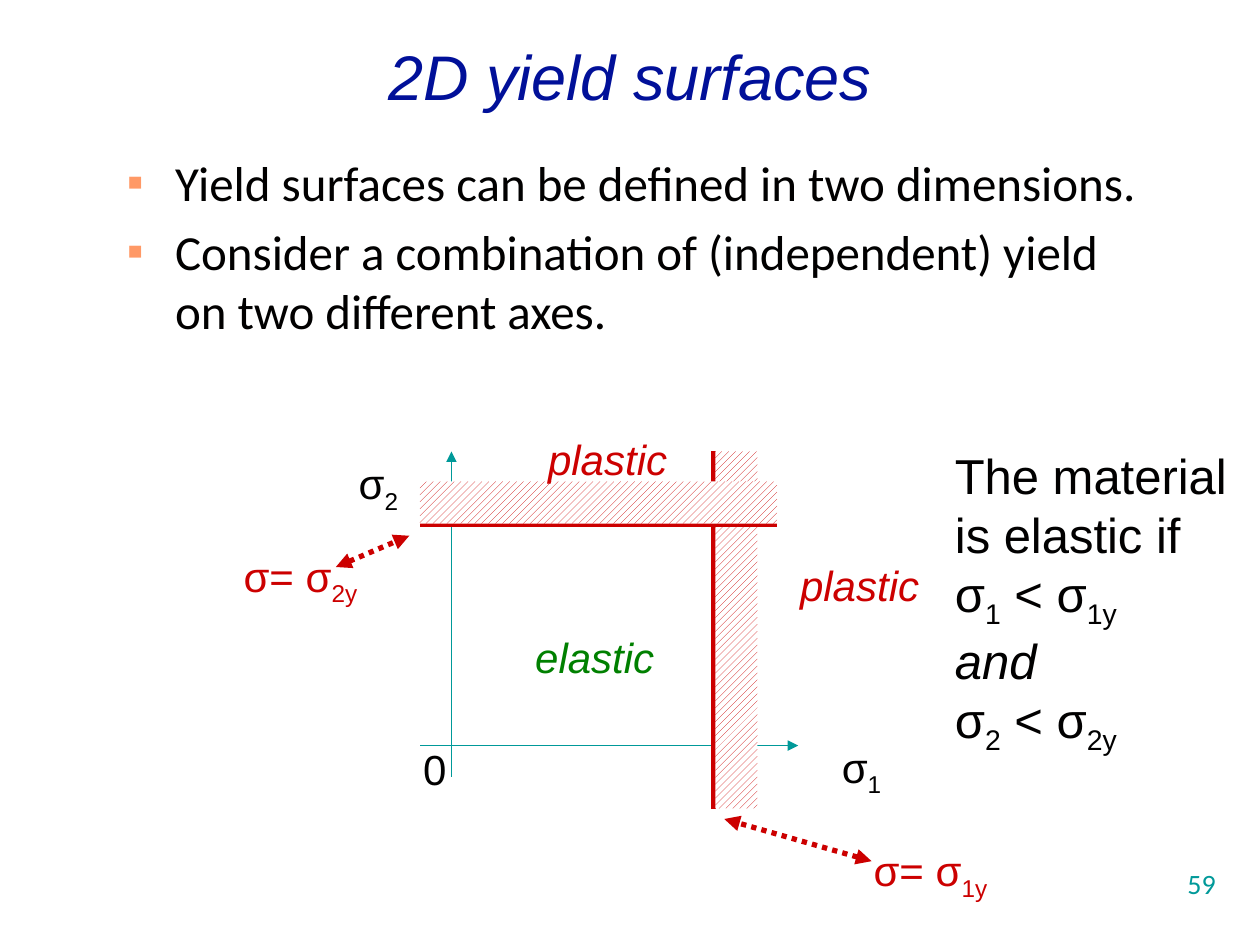
from dataclasses import dataclass

from lxml.etree import SubElement
from pptx import Presentation
from pptx.dml.color import RGBColor
from pptx.enum.dml import MSO_LINE, MSO_PATTERN
from pptx.enum.shapes import MSO_CONNECTOR, MSO_SHAPE
from pptx.enum.text import MSO_ANCHOR, MSO_AUTO_SIZE, PP_ALIGN
from pptx.oxml.ns import qn
from pptx.slide import Slide
from pptx.util import Cm, Pt

COLORS = {
    "title": "011099",
    "text": "010000",
    "axis": "009999",
    "yield": "CC0000",
    "elastic": "008000",
    "bullet": "FF9966",
    "paper": "FFFFFF",
}


def color(name):
    return RGBColor.from_string(COLORS[name])


def write_text(para, text, size=24, font="Arial", ink="text", italic=False):
    for index, part in enumerate(text.split("|")):
        for row, line in enumerate(part.split("\n")):
            if row:
                para.add_line_break()
            span = para.add_run()
            span.text = line
            span.font.size = Pt(size)
            span.font.name = font
            span.font.italic = italic
            span.font.color.rgb = color(ink)
            if index % 2:
                span._r.get_or_add_rPr().set("baseline", "-25000")


@dataclass
class YieldSlide:
    page: Slide
    thin: float = 0.75
    thick: float = 3

    def text(self, left, top, width, height, paragraphs, wrap=False,
             align=PP_ALIGN.LEFT, anchor=MSO_ANCHOR.TOP, spacing=None, **style):
        box = self.page.shapes.add_textbox(Cm(left), Cm(top), Cm(width), Cm(height))
        frame = box.text_frame
        frame.word_wrap = wrap
        frame.auto_size = MSO_AUTO_SIZE.NONE if wrap else MSO_AUTO_SIZE.SHAPE_TO_FIT_TEXT
        frame.vertical_anchor = anchor
        for index, text in enumerate(paragraphs):
            para = frame.add_paragraph() if index else frame.paragraphs[0]
            para.alignment = align
            para.line_spacing = spacing
            write_text(para, text, **{**style, "italic": style.get("italic", text == "and")})
        return frame

    def bullets(self, left, top, width, height, paragraphs, **style):
        frame = self.text(left, top, width, height, paragraphs, wrap=True, **style)
        for para in frame.paragraphs:
            para.space_before = Pt(5.6)
            props = para._p.get_or_add_pPr()
            props.set("marL", str(Cm(0.95)))
            props.set("indent", str(-Cm(0.95)))
            tint = SubElement(props, qn("a:buClr"))
            SubElement(tint, qn("a:srgbClr")).set("val", COLORS["bullet"])
            SubElement(props, qn("a:buSzPct")).set("val", "50000")
            SubElement(props, qn("a:buFont")).set("typeface", "Arial")
            SubElement(props, qn("a:buChar")).set("char", "■")

    def line(self, x1, y1, x2, y2, ink, width, ends=(), dash=None):
        connector = self.page.shapes.add_connector(
            MSO_CONNECTOR.STRAIGHT, Cm(x1), Cm(y1), Cm(x2), Cm(y2))
        connector.line.color.rgb = color(ink)
        connector.line.width = Pt(width)
        if dash:
            connector.line.dash_style = dash
        outline = connector.line._get_or_add_ln()
        for end in ends:
            SubElement(outline, qn(f"a:{end}")).set("type", "triangle")
        SubElement(connector._element.spPr, qn("a:effectLst"))

    def axis(self, *points):
        self.line(*points, "axis", self.thin, ends=["tailEnd"])

    def limit(self, *points):
        self.line(*points, "yield", self.thick)

    def pointer(self, *points):
        self.line(*points, "yield", self.thick, ["headEnd", "tailEnd"], MSO_LINE.ROUND_DOT)

    def hatch(self, left, top, rotation=0):
        shape = self.page.shapes.add_shape(
            MSO_SHAPE.RECTANGLE, Cm(left), Cm(top), Cm(0.85), Cm(7.2))
        shape.shadow.inherit = False
        shape.rotation = rotation
        shape.line.fill.background()
        shape.fill.patterned()
        shape.fill.pattern = MSO_PATTERN.WIDE_UPWARD_DIAGONAL
        shape.fill.fore_color.rgb = color("yield")
        shape.fill.back_color.rgb = color("paper")


def main():
    deck = Presentation()
    deck.slide_width, deck.slide_height = Cm(25.4), Cm(19.05)
    slide = YieldSlide(deck.slides.add_slide(deck.slide_layouts[6]))

    slide.text(19.48, 17.35, 5.28, 1.27, ["59"], wrap=True, align=PP_ALIGN.RIGHT,
               size=16, font="Calibri", ink="axis")
    slide.text(4.23, 0, 16.94, 2.75, ["2D yield surfaces"], wrap=True,
               align=PP_ALIGN.CENTER, anchor=MSO_ANCHOR.MIDDLE, spacing=1.2,
               size=36, ink="title", italic=True)
    slide.bullets(2.33, 2.96, 21.17, 11.43, [
        "Yield surfaces can be defined in two dimensions.",
        "Consider a combination of (independent) yield on two different axes.",
    ], size=28, font="Calibri")
    slide.text(19, 8.86, 6.12, 7.26, [
        "The material\nis elastic if\nσ|1| < σ|1y", "and", "σ|2| < σ|2y",
    ], size=28)

    slide.axis(9.1, 15.66, 9.1, 9.1)
    slide.axis(8.47, 15.03, 16.09, 15.03)
    for left, top, width, label in [
        (8.28, 14.86, 0.99, "0"),
        (16.72, 14.82, 1.3, "σ|1"),
        (6.98, 9.1, 1.3, "σ|2"),
    ]:
        slide.text(left, top, width, 1.27, [label])

    slide.limit(14.39, 9.1, 14.39, 16.3)
    slide.hatch(14.42, 9.1)
    slide.limit(8.47, 10.58, 15.66, 10.58)
    slide.hatch(11.64, 6.53, rotation=270)

    for left, top, width, label, ink, italic in [
        (10.54, 12.6, 3.15, "elastic", "elastic", True),
        (15.88, 11.15, 3.15, "plastic", "yield", True),
        (10.8, 8.61, 3.15, "plastic", "yield", True),
        (17.36, 16.9, 2.82, "σ= σ|1y", "yield", False),
        (4.66, 10.97, 2.82, "σ= σ|2y", "yield", False),
    ]:
        slide.text(left, top, width, 1.27, [label], ink=ink, italic=italic)

    slide.pointer(17.57, 17.36, 14.6, 16.51)
    slide.pointer(6.77, 11.43, 8.25, 10.8)

    deck.save("out.pptx")


if __name__ == "__main__":
    main()
